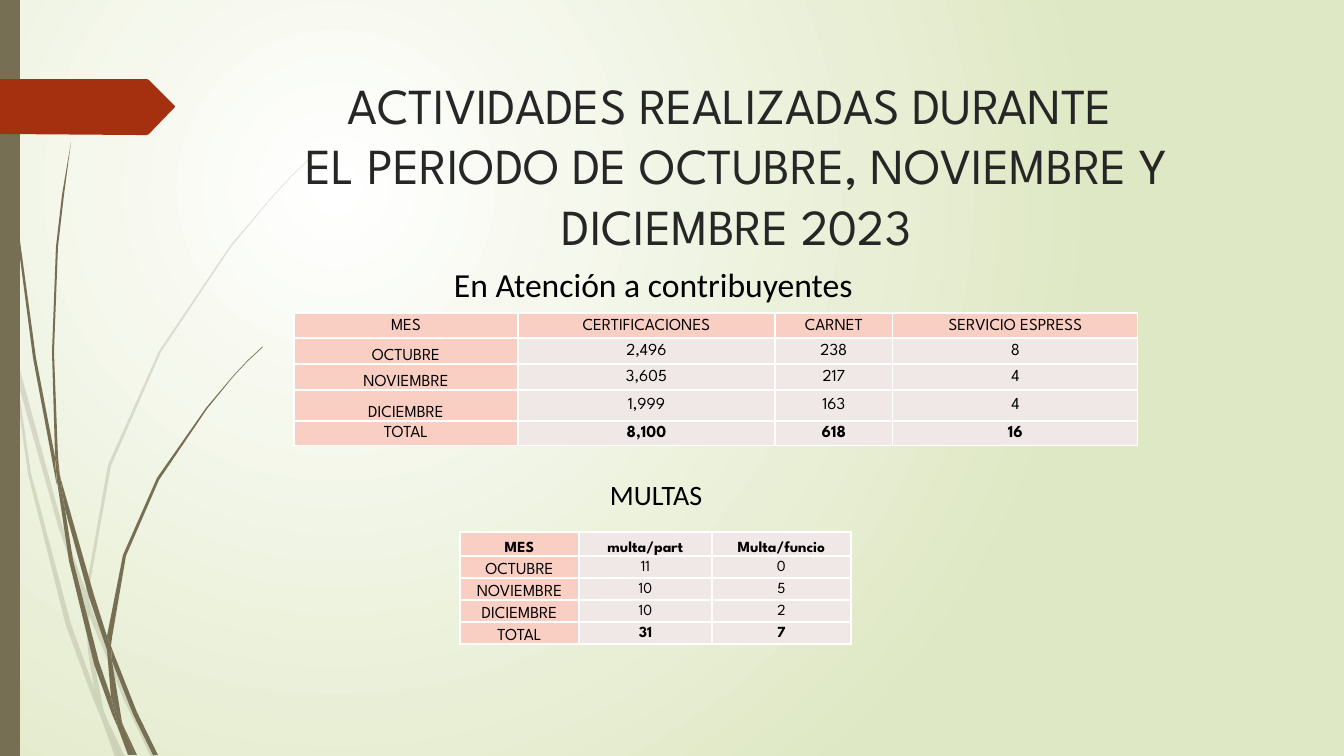
from dataclasses import dataclass

from lxml.etree import SubElement
from pptx import Presentation
from pptx.dml.color import RGBColor
from pptx.enum.shapes import MSO_SHAPE as Shape
from pptx.enum.text import MSO_ANCHOR as Anchor, MSO_AUTO_SIZE as AutoSize, PP_ALIGN as Align
from pptx.oxml.ns import qn
from pptx.util import Pt

# Content
TITLE = ("ACTIVIDADES REALIZADAS DURANTE ",
         "EL PERIODO DE OCTUBRE, NOVIEMBRE Y DICIEMBRE 2023")
TITLE_BOX = (205, 69, 1063, 239)
HEADINGS = [
    dict(text="En Atención a contribuyentes", box=(444, 256, 462, 51), size="heading",
         frame=dict(word_wrap=True, vertical_anchor=Anchor.TOP),
         spacing=dict(line_spacing=1.07, space_after=Pt(8))),
    dict(text="MULTAS", box=(600, 472, 114, 44), size="subheading",
         frame=dict(word_wrap=False, vertical_anchor=Anchor.MIDDLE), spacing={}),
]
SERVICES = dict(
    origin=(294, 313), columns=(224, 257, 118, 245), heights=(25, 26, 26, 31, 25),
    number_size="table", header_fill="label", header_bold=False, bottom_labels=range(1, 4),
    rows=[("MES", "CERTIFICACIONES", "CARNET", "SERVICIO ESPRESS"),
          ("OCTUBRE", "2,496", "238", "8"),
          ("NOVIEMBRE", "3,605", "217", "4"),
          ("DICIEMBRE", "1,999", "163", "4"),
          ("TOTAL", "8,100", "618", "16")])
FINES = dict(
    origin=(460, 532), columns=(119, 133, 139), heights=(24, 22, 22, 22, 22),
    number_size="small", header_fill="value", header_bold=True, bottom_labels=range(5),
    rows=[("MES", "multa/part", "Multa/funcio"),
          ("OCTUBRE", "11", "0"),
          ("NOVIEMBRE", "10", "5"),
          ("DICIEMBRE", "10", "2"),
          ("TOTAL", "31", "7")])

# Outlines of the grass pieces and the arrow, corners in px
PALE_GRASS = [
    [(11, 353), (9, 325), (0, 284), (0, 301), (10, 347)],
    [(58, 526), (85, 604), (86, 591), (62, 524), (14, 348), (17, 379)],
    [(93, 612), (89, 601), (89, 615), (124, 700), (151, 757), (156, 757), (128, 698)],
    [(120, 757), (125, 757), (106, 717)],
    [(94, 688), (71, 624), (31, 473), (17, 379), (11, 353), (28, 474), (66, 626), (93, 699),
     (102, 720), (100, 713)],
    [(85, 604), (88, 651), (94, 688), (97, 698), (106, 717), (104, 712), (92, 651), (89, 615),
     (89, 613)],
    [(89, 589), (111, 466), (161, 352), (231, 247), (270, 200), (292, 176), (314, 155),
     (314, 154), (291, 176), (270, 199), (230, 246), (159, 351), (108, 465), (86, 589),
     (86, 591), (89, 601)],
    [(102, 720), (115, 757), (120, 757)],
    [(89, 613), (89, 615), (89, 601), (86, 591), (85, 604)],
    [(97, 698), (94, 688), (100, 713), (102, 720), (120, 757), (106, 717)],
]
DARK_GRASS = [
    [(7, 111), (17, 235), (33, 358), (56, 481), (57, 485), (55, 461), (55, 457), (36, 358),
     (19, 234), (8, 110), (5, 48), (4, 0), (3, 0), (4, 48)],
    [(89, 597), (107, 650), (107, 638), (107, 636), (94, 595), (60, 476), (65, 509)],
    [(114, 654), (111, 646), (112, 661), (133, 714), (153, 755), (158, 755), (137, 712)],
    [(111, 697), (99, 662), (73, 560), (65, 509), (57, 481), (69, 561), (94, 664), (112, 714),
     (118, 728), (117, 723)],
    [(60, 476), (58, 457), (54, 352), (58, 247), (64, 195), (71, 142), (62, 195), (56, 247),
     (52, 352), (55, 453)],
    [(134, 755), (137, 755), (123, 725)],
    [(57, 481), (65, 509), (60, 476), (55, 453), (55, 457)],
    [(112, 638), (126, 556), (159, 480), (207, 409), (233, 377), (247, 362), (263, 347),
     (262, 347), (247, 361), (233, 376), (206, 408), (157, 478), (123, 555), (107, 636),
     (111, 646)],
    [(118, 728), (128, 755), (132, 755)],
    [(107, 650), (111, 697), (117, 712), (123, 725), (122, 722), (112, 661), (110, 656)],
    [(107, 650), (110, 656), (112, 661), (111, 646), (107, 636), (107, 638)],
    [(117, 712), (111, 697), (117, 723), (118, 728), (131, 755), (134, 755), (123, 725)],
]
ARROW = [(175, 107), (149, 134), (147, 135), (137, 135), (0, 134), (0, 79), (137, 79),
         (147, 79), (149, 80), (175, 106)]


# Theme
@dataclass(frozen=True)
class Theme:
    colours = {name: RGBColor.from_string(code) for name, code in dict(
        centre="FFFFFF", edge="DFE8C4", stem="766F54", arrow="A53010", title="262626",
        text="000000", label="F9CFC3", value="F0E8E7", border="FFFFFF").items()}
    sizes = dict(title=36, heading=24, subheading=20, table=12, small=11)
    display = "League Spartan"
    body = "Calibri"


theme = Theme()
SLIDE = (1344, 756)
EMU_PER_PX = 12192000 / SLIDE[0]


def px(*lengths):
    return [round(length * EMU_PER_PX) for length in lengths]


def set_all(target, values):
    for name, value in values.items():
        setattr(target, name, value)


def style_font(font, size, name, colour="text", bold=False):
    set_all(font, dict(size=Pt(theme.sizes[size]), name=name, bold=bold))
    font.color.rgb = theme.colours[colour]


def paint(shape, colour, opacity=100):
    shape.shadow.inherit = False
    shape.fill.solid()
    shape.fill.fore_color.rgb = theme.colours[colour]
    shape.line.fill.background()
    if opacity < 100:
        rgb = shape._element.spPr.find(qn("a:solidFill")).find(qn("a:srgbClr"))
        SubElement(rgb, qn("a:alpha"), val=str(opacity * 1000))


def add_outline(slide, corners, colour, opacity=100):
    builder = slide.shapes.build_freeform(*corners[0], scale=EMU_PER_PX)
    builder.add_line_segments(corners[1:], close=True)
    paint(builder.convert_to_shape(), colour, opacity)


def add_borders(cell):
    properties = cell._tc.get_or_add_tcPr()
    for index, side in enumerate(("lnL", "lnR", "lnT", "lnB")):
        line = properties.makeelement(qn(f"a:{side}"), {"w": str(Pt(1))})
        properties.insert(index, line)
        fill = SubElement(line, qn("a:solidFill"))
        SubElement(fill, qn("a:srgbClr"), val=str(theme.colours["border"]))


def add_month_table(slide, data):
    rows, columns, heights = data["rows"], data["columns"], data["heights"]
    frame = slide.shapes.add_table(len(rows), len(columns),
                                   *px(*data["origin"], sum(columns), sum(heights)))
    table = frame.table
    set_all(table, dict(first_row=False, horz_banding=False))
    for column, width in zip(table.columns, px(*columns)):
        column.width = width
    margin, = px(1)
    for r, (row, height) in enumerate(zip(rows, px(*heights))):
        table.rows[r].height = height
        for c, text in enumerate(row):
            is_header, is_label = r == 0, c == 0
            bold = data["header_bold"] if is_header else r == len(rows) - 1 and not is_label
            at_bottom = (is_label and r in data["bottom_labels"]
                         or is_header and data["header_bold"])
            cell = table.cell(r, c)
            set_all(cell, dict(text=text, margin_left=margin, margin_right=margin,
                               margin_top=margin, margin_bottom=0,
                               vertical_anchor=Anchor.BOTTOM if at_bottom else Anchor.MIDDLE))
            paragraph = cell.text_frame.paragraphs[0]
            paragraph.alignment = Align.CENTER
            size = "table" if is_label and not is_header else data["number_size"]
            style_font(paragraph.runs[0].font, size, theme.display, bold=bold)
            cell.fill.solid()
            fill = "label" if is_label else data["header_fill"] if is_header else "value"
            cell.fill.fore_color.rgb = theme.colours[fill]
            add_borders(cell)


def add_background(slide):
    fill = slide.background.fill
    fill.gradient()
    for stop, colour, position in zip(fill.gradient_stops, ("centre", "edge"), (0, 1)):
        stop.color.rgb = theme.colours[colour]
        stop.position = position
    gradient = slide._element.find(".//" + qn("a:gradFill"))
    gradient.remove(gradient.find(qn("a:lin")))
    radial = SubElement(gradient, qn("a:path"), {"path": "circle"})
    SubElement(radial, qn("a:fillToRect"), l="50000", t="50000", r="100000", b="100000")


def add_title(slide):
    title = slide.shapes.title
    set_all(title, dict(zip(("left", "top", "width", "height"), px(*TITLE_BOX))))
    title._element.getparent().append(title._element)  # in front of the grass
    set_all(title.text_frame, dict(word_wrap=True, vertical_anchor=Anchor.TOP,
                                   auto_size=AutoSize.NONE))
    paragraph = title.text_frame.paragraphs[0]
    paragraph.alignment = Align.CENTER
    for index, line in enumerate(TITLE):
        if index:
            paragraph.add_line_break()
        run = paragraph.add_run()
        run.text = line
        style_font(run.font, "title", theme.display, "title")


def add_heading(slide, heading):
    frame = slide.shapes.add_textbox(*px(*heading["box"])).text_frame
    set_all(frame, dict(heading["frame"], text=heading["text"],
                        auto_size=AutoSize.SHAPE_TO_FIT_TEXT))
    paragraph = frame.paragraphs[0]
    set_all(paragraph, heading["spacing"])
    style_font(paragraph.runs[0].font, heading["size"], theme.body)


def main():
    presentation = Presentation()
    set_all(presentation, dict(zip(("slide_width", "slide_height"), px(*SLIDE))))
    slide = presentation.slides.add_slide(presentation.slide_layouts[5])
    add_background(slide)

    # Grass, side bar and arrow
    for pieces, opacity in ((PALE_GRASS, 20), (DARK_GRASS, 100)):
        for corners in pieces:
            add_outline(slide, corners, "stem", opacity)
    paint(slide.shapes.add_shape(Shape.RECTANGLE, *px(0, 0, 20, SLIDE[1])), "stem")
    add_outline(slide, ARROW, "arrow")

    # Text and tables
    add_title(slide)
    for heading in HEADINGS:
        add_heading(slide, heading)
    for data in (SERVICES, FINES):
        add_month_table(slide, data)
    presentation.save("out.pptx")


if __name__ == "__main__":
    main()
